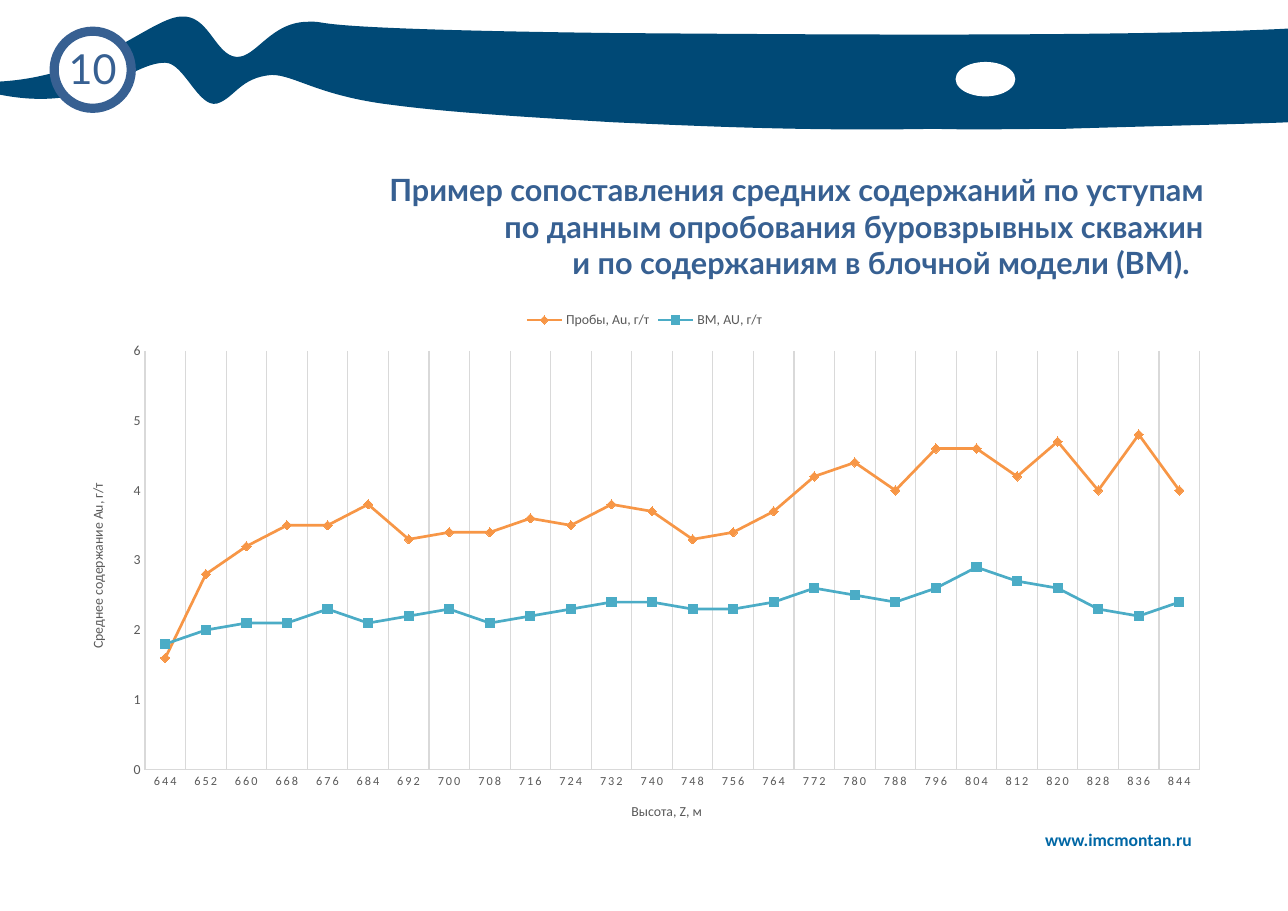
from dataclasses import dataclass

from lxml.etree import SubElement
from pptx import Presentation
from pptx.chart.data import CategoryChartData
from pptx.dml.color import RGBColor
from pptx.enum.chart import XL_CHART_TYPE, XL_LEGEND_POSITION, XL_MARKER_STYLE, XL_TICK_MARK
from pptx.enum.shapes import MSO_SHAPE
from pptx.enum.text import MSO_ANCHOR, MSO_AUTO_SIZE, PP_ALIGN
from pptx.oxml.ns import qn
from pptx.util import Pt


@dataclass(frozen=True)
class Theme:
    band: RGBColor = RGBColor.from_string("004976")
    white: RGBColor = RGBColor.from_string("FFFFFF")
    accent: RGBColor = RGBColor.from_string("376092")
    link: RGBColor = RGBColor.from_string("0067A5")
    gray: RGBColor = RGBColor.from_string("595959")
    grid: RGBColor = RGBColor.from_string("D9D9D9")
    samples: RGBColor = RGBColor.from_string("F79646")
    model: RGBColor = RGBColor.from_string("4BACC6")
    heading_font: str = "Lato"
    body_font: str = "Calibri"
    title_size: float = 20
    badge_size: float = 27
    link_size: float = 11.5
    chart_size: float = 9
    category_size: float = 8


THEME = Theme()
WIDTH, HEIGHT = 841.7, 595.4

# Title lines with their right indents
TITLE_LINES = [
    ("Пример сопоставления средних содержаний по уступам", 0),
    ("по данным опробования буровзрывных скважин", 0),
    ("и по содержаниям в блочной модели (BM).", 9.2),
]
LEVELS = range(644, 845, 8)
SERIES = [
    ("Пробы, Au, г/т", THEME.samples, XL_MARKER_STYLE.DIAMOND,
     [1.6, 2.8, 3.2, 3.5, 3.5, 3.8, 3.3, 3.4, 3.4, 3.6, 3.5, 3.8, 3.7,
      3.3, 3.4, 3.7, 4.2, 4.4, 4.0, 4.6, 4.6, 4.2, 4.7, 4.0, 4.8, 4.0]),
    ("BM, AU, г/т", THEME.model, XL_MARKER_STYLE.SQUARE,
     [1.8, 2.0, 2.1, 2.1, 2.3, 2.1, 2.2, 2.3, 2.1, 2.2, 2.3, 2.4, 2.4,
      2.3, 2.3, 2.4, 2.6, 2.5, 2.4, 2.6, 2.9, 2.7, 2.6, 2.3, 2.2, 2.4]),
]

# Wave outline: a start point, then two control points and an end point per curve
WAVE_START = (0, 61.9)
WAVE_CURVES = [
    ((0, 55.4), (0, 56.9), (0, 53.3)),
    ((63.4, 49.7), (97.9, 12.2), (118.1, 10.8)),
    ((135.4, 9.4), (139.7, 32.4), (151.9, 36.7)),
    ((165.6, 41), (174.2, 16.6), (198, 14.4)),
    ((223.2, 13), (175, 18.7), (398.9, 21.6)),
    ((506.2, 22.3), (729.4, 24.5), (WIDTH, 18.7)),
    ((WIDTH, 36), (WIDTH, 79.9), (WIDTH, 79.9)),
    ((832.3, 80.6), (712.8, 83.5), (695.5, 84.2)),
    ((666, 84.2), (638.6, 85), (610.6, 84.2)),
    ((529.2, 85.7), (463.7, 82.8), (400.3, 79.9)),
    ((340.6, 76.3), (292.3, 73.4), (254.9, 68.4)),
    ((208.1, 62.6), (192.2, 49), (177.8, 49)),
    ((157, 50.4), (153.4, 64.1), (141.8, 67.7)),
    ((129.6, 70.6), (120.2, 41), (108, 41)),
    ((84.2, 41), (62.6, 74.2), WAVE_START),
]


def style_font(font, name, size, color, bold=False):
    font.name, font.size, font.bold = name, Pt(size), bold
    font.color.rgb = color


def style_line(line, color, width):
    line.color.rgb = color
    line.width = Pt(width)


def fill_plain(shape, color):
    shape.shadow.inherit = False
    shape.fill.solid()
    shape.fill.fore_color.rgb = color
    shape.line.fill.background()


def add_wave(slide, left, top):
    builder = slide.shapes.build_freeform(Pt(left + WAVE_START[0]), Pt(top + WAVE_START[1]))
    builder.add_line_segments(
        [(Pt(left + x), Pt(top + y)) for _, _, (x, y) in WAVE_CURVES], close=True)
    wave = builder.convert_to_shape()
    fill_plain(wave, THEME.band)
    # Turn each straight segment into a cubic curve
    segments = list(wave.element.iter(qn("a:lnTo")))
    for segment, curve in zip(segments, WAVE_CURVES):
        segment.tag = qn("a:cubicBezTo")
        for index, (x, y) in enumerate(curve[:2]):
            point = SubElement(segment, qn("a:pt"))
            point.set("x", str(Pt(left + x) - wave.left))
            point.set("y", str(Pt(top + y) - wave.top))
            segment.insert(index, point)


def add_header(slide, left, top):
    add_wave(slide, left, top)

    # Plain emblem
    emblem = slide.shapes.add_shape(
        MSO_SHAPE.OVAL, Pt(left + 624.5), Pt(top + 40.5), Pt(39), Pt(22.5))
    fill_plain(emblem, THEME.white)

    # Page number badge
    badge = slide.shapes.add_shape(
        MSO_SHAPE.OVAL, Pt(left + 35.4), Pt(top + 20.4), Pt(50.4), Pt(50.4))
    fill_plain(badge, THEME.white)
    style_line(badge.line, THEME.accent, 6)
    frame = badge.text_frame
    frame.margin_left = frame.margin_right = frame.margin_top = 0
    frame.margin_bottom = Pt(2)
    frame.word_wrap = False
    frame.vertical_anchor = MSO_ANCHOR.MIDDLE
    paragraph = frame.paragraphs[0]
    paragraph.alignment = PP_ALIGN.CENTER
    run = paragraph.add_run()
    run.text = "10"
    style_font(run.font, THEME.heading_font, THEME.badge_size, THEME.accent)


def add_title(slide, left, top, width, height):
    title = slide.shapes.title
    title.left, title.top, title.width, title.height = map(Pt, (left, top, width, height))
    frame = title.text_frame
    frame.auto_size = MSO_AUTO_SIZE.NONE
    frame.vertical_anchor = MSO_ANCHOR.MIDDLE
    frame.margin_right = Pt(13.1)
    for index, (text, indent) in enumerate(TITLE_LINES):
        paragraph = frame.add_paragraph() if index else frame.paragraphs[0]
        paragraph.alignment = PP_ALIGN.RIGHT
        paragraph._p.get_or_add_pPr().set("marR", str(Pt(indent)))
        run = paragraph.add_run()
        run.text = text
        style_font(run.font, THEME.heading_font, THEME.title_size, THEME.accent, bold=True)


def style_axis(axis, title, size):
    axis.major_tick_mark = axis.minor_tick_mark = XL_TICK_MARK.NONE
    style_line(axis.format.line, THEME.grid, 0.75)
    style_font(axis.tick_labels.font, THEME.body_font, size, THEME.gray)
    run = axis.axis_title.text_frame.paragraphs[0].add_run()
    run.text = title
    style_font(run.font, THEME.body_font, THEME.chart_size, THEME.gray)


def set_plot_layout(chart, **fractions):
    plot_area = chart.element.find(".//" + qn("c:plotArea"))
    layout = plot_area.find(qn("c:layout"))
    if layout is None:
        layout = SubElement(plot_area, qn("c:layout"))
        plot_area.insert(0, layout)
    manual = SubElement(layout, qn("c:manualLayout"))
    settings = {"layoutTarget": "inner", "xMode": "edge", "yMode": "edge", **fractions}
    for name, value in settings.items():
        SubElement(manual, qn("c:" + name)).set("val", str(value))


def add_grade_chart(slide, left, top, width, height):
    data = CategoryChartData()
    data.categories = [str(level) for level in LEVELS]
    for name, _, _, values in SERIES:
        data.add_series(name, values)
    chart = slide.shapes.add_chart(
        XL_CHART_TYPE.LINE_MARKERS, *map(Pt, (left, top, width, height)), data).chart
    chart.has_title = False
    style_font(chart.font, THEME.body_font, THEME.chart_size, THEME.gray)
    set_plot_layout(chart, x=52.3 / width, y=33.5 / height, w=689.2 / width, h=273.8 / height)

    # Legend
    chart.has_legend = True
    chart.legend.position = XL_LEGEND_POSITION.TOP
    chart.legend.include_in_layout = False
    style_font(chart.legend.font, THEME.body_font, THEME.chart_size, THEME.gray)

    # Axes
    levels, grades = chart.category_axis, chart.value_axis
    style_axis(levels, "Высота, Z, м", THEME.category_size)
    style_axis(grades, "Среднее содержание Au, г/т", THEME.chart_size)
    levels.has_major_gridlines = True
    style_line(levels.major_gridlines.format.line, THEME.grid, 0.75)
    levels.tick_labels.font._element.set("spc", "120")
    grades.has_major_gridlines = False
    grades.minimum_scale, grades.maximum_scale, grades.major_unit = 0, 6, 1

    # Series
    chart.plots[0].vary_by_categories = False
    for series, (_, color, marker, _) in zip(chart.plots[0].series, SERIES):
        series.smooth = False
        style_line(series.format.line, color, 1.75)
        series.marker.style, series.marker.size = marker, 6
        series.marker.format.fill.solid()
        series.marker.format.fill.fore_color.rgb = color
        style_line(series.marker.format.line, color, 0.75)


def add_site_address(slide, left, top, width, height):
    box = slide.shapes.add_textbox(*map(Pt, (left, top, width, height)))
    box.text_frame.word_wrap = True
    run = box.text_frame.paragraphs[0].add_run()
    run.text = "www.imcmontan.ru"
    style_font(run.font, THEME.body_font, THEME.link_size, THEME.link, bold=True)


def main():
    presentation = Presentation()
    presentation.slide_width, presentation.slide_height = Pt(WIDTH), Pt(HEIGHT)
    slide = presentation.slides.add_slide(presentation.slide_layouts[5])
    add_header(slide, 0, 0)
    add_title(slide, 41.8, 99.4, 758.2, 96.5)
    add_grade_chart(slide, 42.5, 195.8, 757.5, 357.1)
    add_site_address(slide, 675.8, 538.3, 123.8, 20.9)
    presentation.save("out.pptx")


if __name__ == "__main__":
    main()
